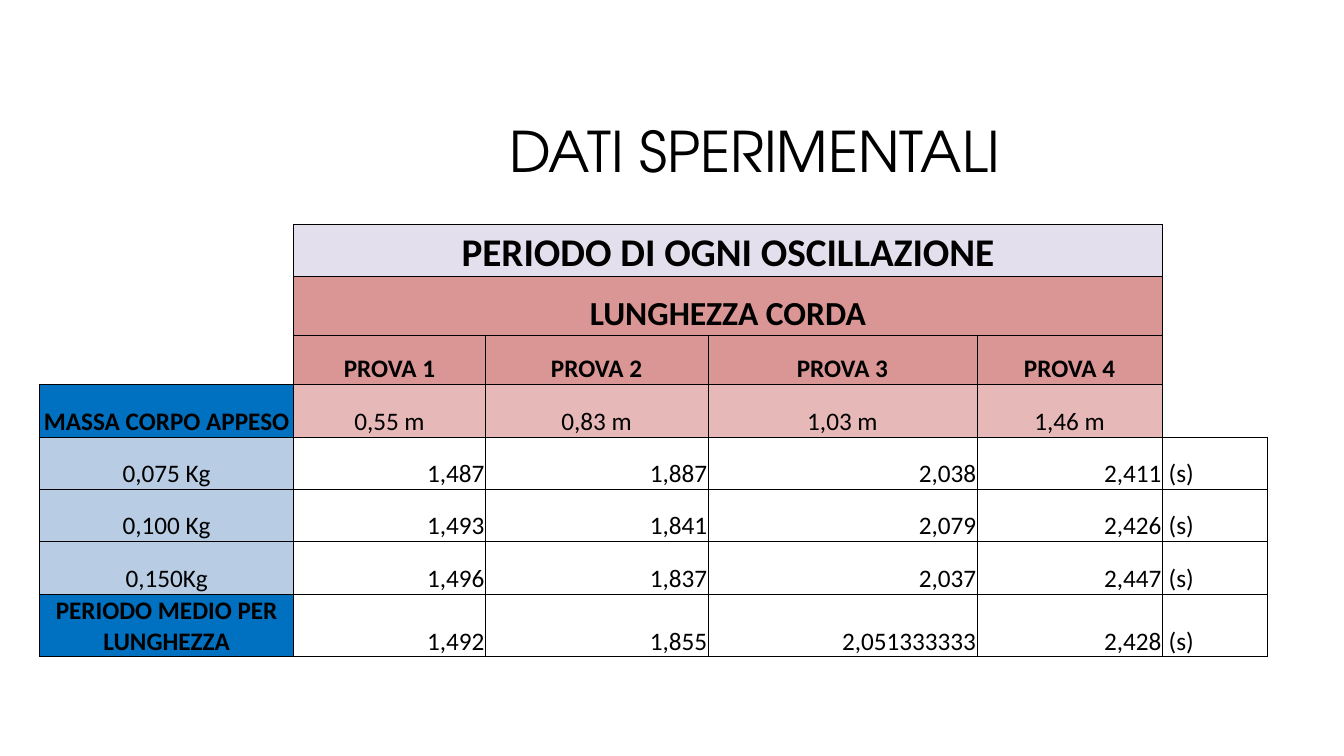
from lxml import etree
from pptx import Presentation
from pptx.dml.color import RGBColor
from pptx.enum.text import MSO_ANCHOR, PP_ALIGN
from pptx.oxml.ns import qn
from pptx.util import Cm, Pt

LEFT, CENTER, RIGHT = PP_ALIGN.LEFT, PP_ALIGN.CENTER, PP_ALIGN.RIGHT
BOTTOM, MIDDLE = MSO_ANCHOR.BOTTOM, MSO_ANCHOR.MIDDLE

BLACK = RGBColor(0x00, 0x00, 0x00)
WHITE = RGBColor(0xFF, 0xFF, 0xFF)
LAVENDER = RGBColor(0xE4, 0xDF, 0xEC)
ROSE = RGBColor(0xDA, 0x96, 0x94)
LIGHT_ROSE = RGBColor(0xE6, 0xB8, 0xB7)
BLUE = RGBColor(0x00, 0x70, 0xC0)
LIGHT_BLUE = RGBColor(0xB8, 0xCC, 0xE4)

COLUMN_WIDTHS = [6.4, 4.83, 5.61, 6.78, 4.67, 2.64]
ROW_HEIGHTS = [1.32, 1.47, 1.25, 1.32, 1.32, 1.32, 1.32, 1.58]
HEADER_ROWS = 4
UNIT_COLUMN = 5

ROWS = [
    ["", "PERIODO DI OGNI OSCILLAZIONE", "", "", "", ""],
    ["", "LUNGHEZZA CORDA", "", "", "", ""],
    ["", "PROVA 1", "PROVA 2", "PROVA 3", "PROVA 4", ""],
    ["MASSA CORPO APPESO", "0,55 m", "0,83 m", "1,03 m", "1,46 m", ""],
    ["0,075 Kg", "1,487", "1,887", "2,038", "2,411", " (s)"],
    ["0,100 Kg", "1,493", "1,841", "2,079", "2,426", " (s)"],
    ["0,150Kg", "1,496", "1,837", "2,037", "2,447", " (s)"],
    ["PERIODO MEDIO PER LUNGHEZZA", "1,492", "1,855", "2,051333333", "2,428", " (s)"],
]
HEADER_FILLS = [LAVENDER, ROSE, ROSE, LIGHT_ROSE]
LABEL_FILLS = {3: BLUE, 4: LIGHT_BLUE, 5: LIGHT_BLUE, 6: LIGHT_BLUE, 7: BLUE}
HEADING_SIZES = {0: 28, 1: 24}


def format_paragraph(paragraph, font_name, size, alignment, bold=False):
    paragraph.alignment = alignment
    for run in paragraph.runs:
        run.font.name = font_name
        run.font.size = Pt(size)
        run.font.bold = bold
        run.font.color.rgb = BLACK


def add_title(slide, text):
    title = slide.shapes.add_textbox(Cm(7.06), Cm(2.11), Cm(23.93), Cm(3.58))
    text_frame = title.text_frame
    text_frame.word_wrap = True
    text_frame.vertical_anchor = MIDDLE
    text_frame.text = text
    paragraph = text_frame.paragraphs[0]
    paragraph.line_spacing = 0.9
    format_paragraph(paragraph, "TeX Gyre Adventor", 40, CENTER)


def is_framed(row, column):
    """Tell whether a grid position is outside the empty corners."""
    if not (0 <= row < len(ROWS) and 0 <= column < len(COLUMN_WIDTHS)):
        return False
    if column == 0:
        return row in LABEL_FILLS
    return column < UNIT_COLUMN or row >= HEADER_ROWS


def set_borders(cell, row, column):
    """Draw each side that touches a framed cell and clear the others."""
    properties = cell._tc.get_or_add_tcPr()
    neighbours = {"a:lnL": (row, column - 1), "a:lnR": (row, column + 1),
                  "a:lnT": (row - 1, column), "a:lnB": (row + 1, column)}
    for index, (tag, neighbour) in enumerate(neighbours.items()):
        line = etree.Element(qn(tag), w=str(Pt(0.5)))
        if is_framed(row, column) or is_framed(*neighbour):
            fill = etree.SubElement(line, qn("a:solidFill"))
            etree.SubElement(fill, qn("a:srgbClr"), val=str(BLACK))
        else:
            etree.SubElement(line, qn("a:noFill"))
        properties.insert(index, line)


def set_fill(cell, row, column):
    if not is_framed(row, column):
        cell.fill.background()
        return
    cell.fill.solid()
    if column == 0:
        cell.fill.fore_color.rgb = LABEL_FILLS[row]
    elif row < HEADER_ROWS:
        cell.fill.fore_color.rgb = HEADER_FILLS[row]
    else:
        cell.fill.fore_color.rgb = WHITE


def set_text(cell, row, column):
    cell.margin_left = cell.margin_right = cell.margin_top = Cm(0.02)
    cell.margin_bottom = 0
    cell.vertical_anchor = BOTTOM
    cell.text_frame.text = ROWS[row][column]
    if column == 0 or row < HEADER_ROWS:
        alignment = CENTER
    else:
        alignment = LEFT if column == UNIT_COLUMN else RIGHT
    bold = row < 3 or (column == 0 and LABEL_FILLS[row] == BLUE)
    format_paragraph(cell.text_frame.paragraphs[0], "Calibri",
                     HEADING_SIZES.get(row, 18), alignment, bold)


def add_data_table(slide):
    frame = slide.shapes.add_table(len(ROWS), len(COLUMN_WIDTHS), Cm(1), Cm(5.65),
                                   Cm(sum(COLUMN_WIDTHS)), Cm(sum(ROW_HEIGHTS)))
    table = frame.table
    table.first_row = table.horz_banding = False
    for column, width in zip(table.columns, COLUMN_WIDTHS):
        column.width = Cm(width)
    for row, height in zip(table.rows, ROW_HEIGHTS):
        row.height = Cm(height)
    for row in HEADING_SIZES:
        table.cell(row, 1).merge(table.cell(row, UNIT_COLUMN - 1))
    for row in range(len(ROWS)):
        for column in range(len(COLUMN_WIDTHS)):
            cell = table.cell(row, column)
            if ROWS[row][column]:
                set_text(cell, row, column)
            set_fill(cell, row, column)
            set_borders(cell, row, column)


def main():
    presentation = Presentation()
    presentation.slide_width = Cm(33.87)
    presentation.slide_height = Cm(19.05)
    slide = presentation.slides.add_slide(presentation.slide_layouts[6])
    add_title(slide, "DATI SPERIMENTALI")
    add_data_table(slide)
    presentation.save("out.pptx")


if __name__ == "__main__":
    main()
